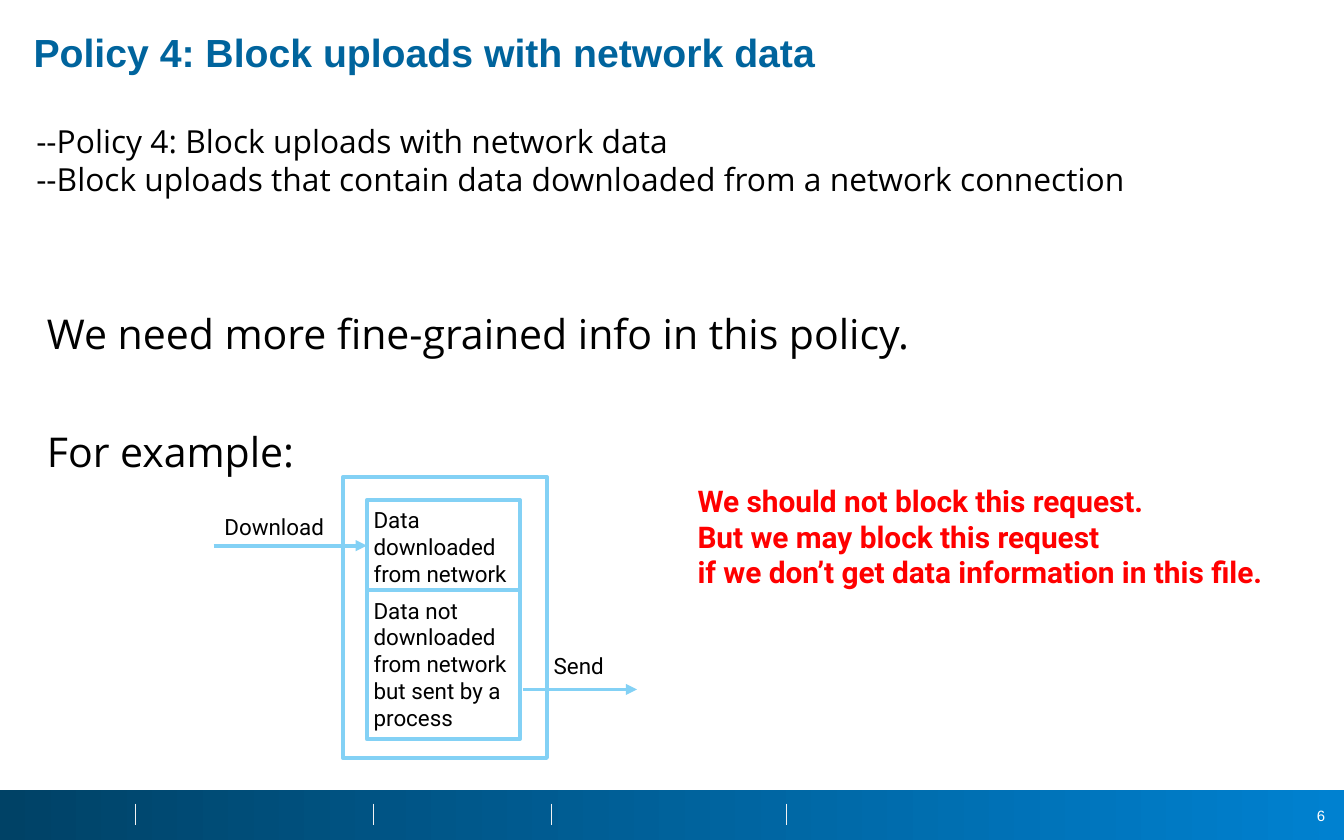
from lxml import etree
from pptx import Presentation
from pptx.dml.color import RGBColor
from pptx.enum.shapes import MSO_CONNECTOR, MSO_SHAPE
from pptx.enum.text import MSO_ANCHOR, MSO_AUTO_SIZE, PP_ALIGN
from pptx.oxml.ns import qn
from pptx.util import Inches, Pt

RECTANGLE = MSO_SHAPE.RECTANGLE
STRAIGHT = MSO_CONNECTOR.STRAIGHT
TOP, MIDDLE = MSO_ANCHOR.TOP, MSO_ANCHOR.MIDDLE
FIT_SHAPE = MSO_AUTO_SIZE.SHAPE_TO_FIT_TEXT
LEFT, RIGHT = PP_ALIGN.LEFT, PP_ALIGN.RIGHT

NAVY = RGBColor(0x00, 0x42, 0x66)
BLUE = RGBColor(0x00, 0x81, 0xD0)
TITLE_BLUE = RGBColor(0x00, 0x64, 0x9D)
SKY = RGBColor(0x83, 0xD1, 0xF5)
PALE = RGBColor(0xF2, 0xF2, 0xF2)
WHITE = RGBColor(0xFF, 0xFF, 0xFF)
BLACK = RGBColor(0x00, 0x00, 0x00)
RED = RGBColor(0xFF, 0x00, 0x00)


def add_text(page, box, lines, font, size, color=BLACK, bold=False, wrap=True,
             align=LEFT, anchor=TOP, line_spacing=None, gap=0):
    shape = page.shapes.add_textbox(*map(Inches, box))
    frame = shape.text_frame
    frame.word_wrap = wrap
    frame.auto_size = FIT_SHAPE
    frame.vertical_anchor = anchor
    frame.margin_left = frame.margin_right = Inches(0.05)
    frame.margin_top = frame.margin_bottom = Inches(0.05)
    for index, line in enumerate(lines):
        para = frame.add_paragraph() if index else frame.paragraphs[0]
        para.alignment = align
        if line_spacing:
            para.line_spacing = line_spacing
        if index and gap:
            para.space_before = Pt(gap)
        span = para.add_run()
        span.text = line
        span.font.name = font
        span.font.size = Pt(size)
        span.font.bold = bold
        span.font.color.rgb = color


def add_line(page, start, end, color, width, arrow=False):
    line = page.shapes.add_connector(STRAIGHT, *map(Inches, start + end))
    line.line.color.rgb = color
    line.line.width = Pt(width)
    properties = line._element.spPr
    etree.SubElement(properties, qn("a:effectLst"))
    if arrow:
        etree.SubElement(line.line._get_or_add_ln(), qn("a:tailEnd"), type="triangle")


def add_frame(page, box):
    shape = page.shapes.add_shape(RECTANGLE, *map(Inches, box))
    shape.shadow.inherit = False
    shape.fill.solid()
    shape.fill.fore_color.rgb = WHITE
    shape.line.color.rgb = SKY
    shape.line.width = Pt(2)


def add_footer(page, box, number):
    left, top, width, height = box
    band = page.shapes.add_shape(RECTANGLE, *map(Inches, box))
    band.shadow.inherit = False
    band.line.fill.background()
    band.fill.gradient()
    band.fill.gradient_angle = 0
    for stop, color in zip(band.fill.gradient_stops, (NAVY, BLUE)):
        stop.color.rgb = color
    for offset in (1.01, 2.78, 4.1, 5.85):
        x = left + offset
        add_line(page, (x, top + 0.1), (x, top + 0.26), PALE, 0.25)
    add_text(page, (left + width - 0.27, top + 0.08, 0.18, 0.22), [number],
             "Arial", 8, WHITE, wrap=False, align=RIGHT, anchor=MIDDLE)


def add_heading(page, box):
    add_text(page, box, ["Policy 4: Block uploads with network data"],
             "Arial", 21, TITLE_BLUE, bold=True, line_spacing=0.9)


def add_summary(page, box):
    add_text(page, box, [
        "--Policy 4: Block uploads with network data",
        "--Block uploads that contain data downloaded from a network connection",
    ], "Open Sans", 17)


def add_argument(page, box):
    add_text(page, box, [
        "We need more fine-grained info in this policy.",
        "For example:",
    ], "Open Sans", 22, line_spacing=1.2, gap=32)


def add_file_diagram(page, box):
    left, top, width, height = box
    add_frame(page, box)
    inner_left, inner_width = left + 0.18, 1.14
    inner_right = inner_left + inner_width
    parts = (
        (0.17, 1.06, "Data downloaded from network"),
        (0.84, 1.11, "Data not downloaded from network but sent by a process"),
    )
    for offset, part_height, label in parts:
        part = (inner_left, top + offset, inner_width, part_height)
        add_frame(page, part)
        add_text(page, part, [label], "Roboto", 12)

    download_y, send_y = top + 0.51, top + 1.58
    add_line(page, (left - 0.96, download_y), (inner_left, download_y), SKY, 2, arrow=True)
    add_line(page, (inner_right + 0.02, send_y), (left + width + 0.67, send_y),
             SKY, 2, arrow=True)
    add_text(page, (left - 0.93, download_y - 0.29, 0.86, 0.29), ["Download"],
             "Roboto", 12, wrap=False)
    add_text(page, (left + width, send_y - 0.33, 0.5, 0.29), ["Send"],
             "Roboto", 12, wrap=False)


def add_warning(page, box):
    add_text(page, box, [
        "We should not block this request.",
        "But we may block this request",
        "if we don’t get data information in this file.",
    ], "Roboto", 16, RED, bold=True, wrap=False)


def main():
    deck = Presentation()
    deck.slide_width = Inches(10)
    deck.slide_height = Inches(6.25)
    page = deck.slides.add_slide(deck.slide_layouts[6])
    add_footer(page, (0, 5.88, 10, 0.38), "6")
    add_heading(page, (0.2, 0.2, 9.59, 0.47))
    add_summary(page, (0.22, 0.86, 9.51, 0.66))
    add_argument(page, (0.3, 2.17, 9.34, 1.33))
    add_file_diagram(page, (2.55, 3.55, 1.52, 2.09))
    add_warning(page, (5.14, 3.54, 4.57, 0.89))
    deck.save("out.pptx")


if __name__ == "__main__":
    main()
